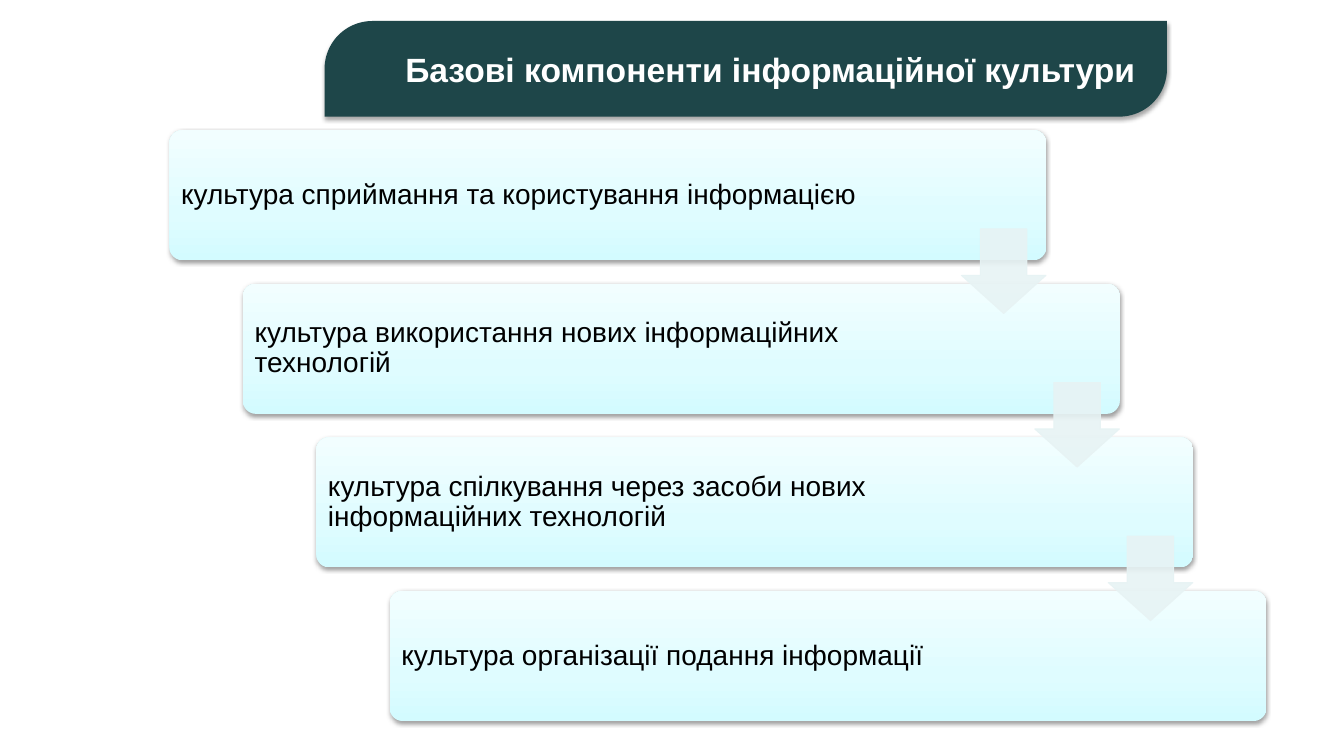
"""Build a slide with a staircase of the components of information culture."""
from copy import deepcopy
from dataclasses import dataclass

from lxml.etree import SubElement
from pptx import Presentation
from pptx.dml.color import RGBColor
from pptx.enum.shapes import MSO_SHAPE
from pptx.enum.text import MSO_ANCHOR, PP_ALIGN
from pptx.oxml.ns import qn
from pptx.util import Cm, Pt

CARD_STOPS = ((0, "D3FBFF"), (0.35, "DFFCFF"), (1, "F2FEFF"))
ARROW_COLOR = "E7F3F4"
STEP_X, STEP_Y = 1.85, 3.87


@dataclass(frozen=True)
class Box:
    left: float
    top: float
    width: float
    height: float

    def step(self, n: int) -> "Box":
        return Box(self.left + n * STEP_X, self.top + n * STEP_Y, self.width, self.height)


TITLE = Box(8.18, 0.53, 21.23, 2.41)
CARD = Box(4.27, 3.28, 22.1, 3.28)
ARROW = Box(24.23, 5.77, 2.13, 2.13)
COMPONENTS = (
    "культура сприймання та користування інформацією",
    "культура використання нових інформаційних технологій",
    "культура спілкування через засоби нових інформаційних технологій",
    "культура організації подання інформації",
)


def rgb(value: str) -> RGBColor:
    return RGBColor.from_string(value)


def add_box(slide, kind: MSO_SHAPE, box: Box, adjustments: tuple):
    sp = slide.shapes.add_shape(
        kind, Cm(box.left), Cm(box.top), Cm(box.width), Cm(box.height))
    for i, value in enumerate(adjustments):
        sp.adjustments[i] = value
    sp.shadow.inherit = False
    sp.line.fill.background()
    return sp


def add_shadow(sp, distance: float, alpha: int) -> None:
    effects = sp._element.spPr.find(qn("a:effectLst"))
    shadow = SubElement(effects, qn("a:outerShdw"), blurRad=str(Pt(3.1)),
                        dist=str(Pt(distance)), dir="5400000", rotWithShape="0")
    color = SubElement(shadow, qn("a:srgbClr"), val="000000")
    SubElement(color, qn("a:alpha"), val=str(alpha * 1000))


def set_text(sp, text: str, size: int, color: str, align: PP_ALIGN, bold: bool = False):
    tf = sp.text_frame
    tf.word_wrap = True
    tf.vertical_anchor = MSO_ANCHOR.MIDDLE
    p = tf.paragraphs[0]
    p.text = text
    p.alignment = align
    p.font.name = "Arial"
    p.font.size = Pt(size)
    p.font.bold = bold
    p.font.color.rgb = rgb(color)
    return p


def add_card(slide, box: Box, text: str) -> None:
    sp = add_box(slide, MSO_SHAPE.ROUNDED_RECTANGLE, box, (0.1,))
    sp.fill.gradient()
    sp.fill.gradient_angle = 90
    stops = sp._element.spPr.find(".//" + qn("a:gsLst"))
    stops.append(deepcopy(stops[0]))
    for stop, (position, color) in zip(sp.fill.gradient_stops, CARD_STOPS):
        stop.position = position
        stop.color.rgb = rgb(color)
    add_shadow(sp, 1.6, 38)
    p = set_text(sp, text, 20, "000000", PP_ALIGN.LEFT)
    p.line_spacing = 0.9
    sp.text_frame.margin_left = Cm(0.2)
    sp.text_frame.margin_right = Cm(4.1)


def add_arrow(slide, box: Box) -> None:
    sp = add_box(slide, MSO_SHAPE.DOWN_ARROW, box, (0.55, 0.45))
    sp.line.width = Pt(0.75)
    for fill in (sp.fill, sp.line.fill):
        fill.solid()
        fill.fore_color.rgb = rgb(ARROW_COLOR)
    for color in sp._element.spPr.iter(qn("a:srgbClr")):
        SubElement(color, qn("a:alpha"), val="90000")


def add_title(slide) -> None:
    sp = add_box(slide, MSO_SHAPE.ROUND_2_DIAG_RECTANGLE, TITLE, (0.5, 0))
    sp.fill.solid()
    sp.fill.fore_color.rgb = rgb("1E4649")
    add_shadow(sp, 1.8, 35)
    p = set_text(sp, "Базові компоненти інформаційної культури", 24, "FFFFFF",
                 PP_ALIGN.CENTER, bold=True)
    p._p.get_or_add_pPr().set("indent", str(Cm(1.24)))


def main() -> None:
    prs = Presentation()
    prs.slide_width, prs.slide_height = Cm(33.87), Cm(19.05)
    s = prs.slides.add_slide(prs.slide_layouts[6])
    for n, text in enumerate(COMPONENTS):
        add_card(s, CARD.step(n), text)
    for n in range(len(COMPONENTS) - 1):
        add_arrow(s, ARROW.step(n))
    add_title(s)
    prs.save("out.pptx")


if __name__ == "__main__":
    main()
